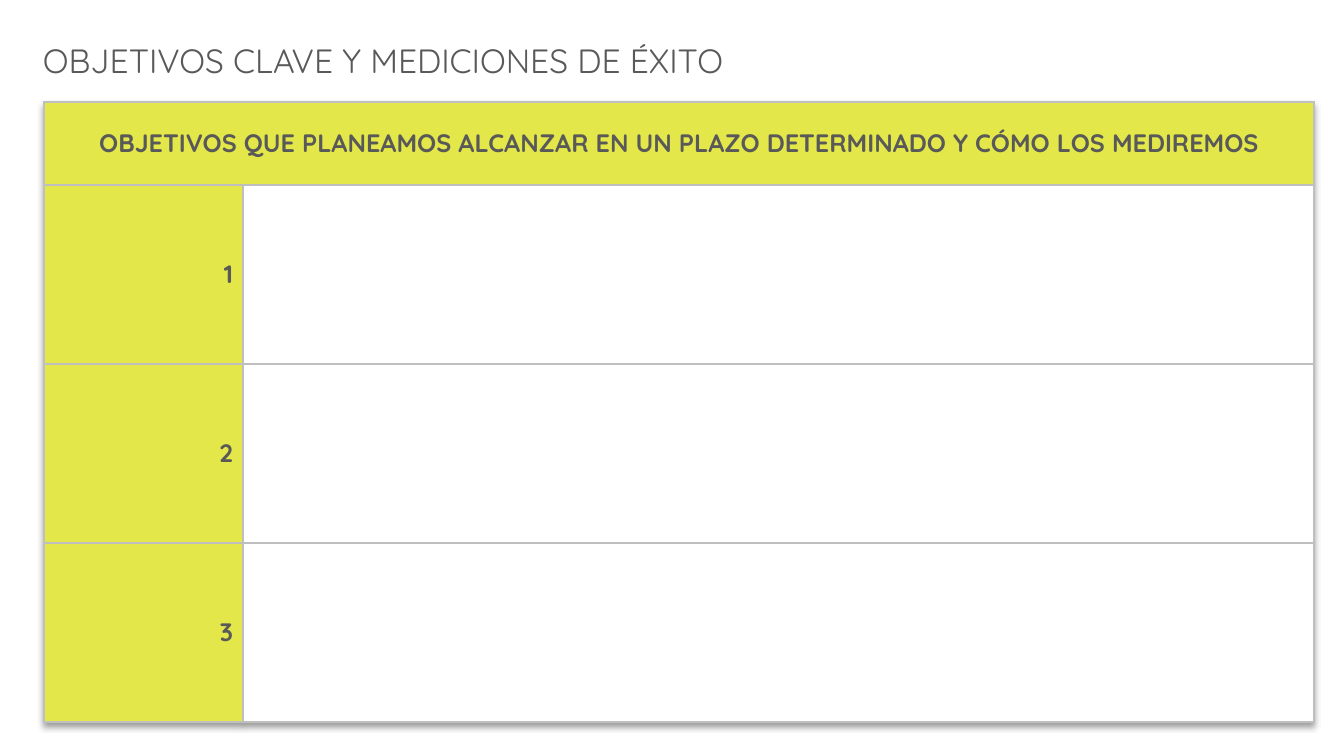
import pptx
import pptx.dml.color
import pptx.enum.text
import pptx.oxml
import pptx.oxml.ns
import pptx.util

COLORS = {"text": "595959", "accent": "E3E749", "border": "BFBFBF", "white": "FFFFFF", "shadow": "000000"}
FONT = "Quicksand"
PX_PER_INCH = 100.8
ALIGN = pptx.enum.text.PP_ALIGN
ANCHOR = pptx.enum.text.MSO_ANCHOR

TITLE = "OBJETIVOS CLAVE Y MEDICIONES DE ÉXITO"
HEADING = "OBJETIVOS QUE PLANEAMOS ALCANZAR EN UN PLAZO DETERMINADO Y CÓMO LOS MEDIREMOS"
GOALS = ["1", "2", "3"]
COLUMN_WIDTHS = [199, 1071]
HEADING_HEIGHT = 83
GOAL_HEIGHT = 179


def px(length):
    return pptx.util.Inches(length / PX_PER_INCH)


def rgb(name):
    return pptx.dml.color.RGBColor.from_string(COLORS[name])


def write_text(frame, text, size=18, bold=False, align=ALIGN.LEFT, color="text"):
    paragraph = frame.paragraphs[0]
    paragraph.alignment = align
    run = paragraph.add_run()
    run.text = text
    run.font.name = FONT
    run.font.size = pptx.util.Pt(size)
    run.font.bold = bold
    run.font.color.rgb = rgb(color)


def add_title(slide, text):
    box = slide.shapes.add_textbox(px(33), px(35), px(814), px(50))
    box.text_frame.word_wrap = True
    write_text(box.text_frame, text, size=24)


def style_cell(cell, fill):
    cell.vertical_anchor = ANCHOR.MIDDLE
    properties = cell._tc.get_or_add_tcPr()
    for side in ("lnL", "lnR", "lnT", "lnB"):
        properties.append(pptx.oxml.parse_xml(
            f'<a:{side} {pptx.oxml.ns.nsdecls("a")} w="12700"><a:solidFill>'
            f'<a:srgbClr val="{COLORS["border"]}"/></a:solidFill></a:{side}>'))
    cell.fill.solid()
    cell.fill.fore_color.rgb = rgb(fill)


def add_table_shadow(table):
    table._tbl.tblPr.insert(0, pptx.oxml.parse_xml(
        f'<a:effectLst {pptx.oxml.ns.nsdecls("a")}>'
        '<a:outerShdw blurRad="50800" dist="38100" dir="5400000" algn="t" rotWithShape="0">'
        f'<a:srgbClr val="{COLORS["shadow"]}"><a:alpha val="40000"/></a:srgbClr>'
        '</a:outerShdw></a:effectLst>'))


def add_goal_table(slide):
    heights = [HEADING_HEIGHT] + [GOAL_HEIGHT] * len(GOALS)
    table = slide.shapes.add_table(
        len(heights), len(COLUMN_WIDTHS), px(44), px(102),
        px(sum(COLUMN_WIDTHS)), px(sum(heights))).table
    table.first_row = False
    table.horz_banding = False
    add_table_shadow(table)
    for column, width in zip(table.columns, COLUMN_WIDTHS):
        column.width = px(width)
    for row_index, height in enumerate(heights):
        table.rows[row_index].height = px(height)
        for column_index in range(len(COLUMN_WIDTHS)):
            is_label = row_index == 0 or column_index == 0
            style_cell(table.cell(row_index, column_index), "accent" if is_label else "white")
    heading = table.cell(0, 0)
    heading.merge(table.cell(0, 1))
    write_text(heading.text_frame, HEADING, bold=True, align=ALIGN.CENTER)
    for row_index, goal in enumerate(GOALS, start=1):
        write_text(table.cell(row_index, 0).text_frame, goal, bold=True, align=ALIGN.RIGHT)


def main():
    presentation = pptx.Presentation()
    presentation.slide_width = px(1344)
    presentation.slide_height = px(756)
    slide = presentation.slides.add_slide(presentation.slide_layouts[6])
    add_title(slide, TITLE)
    add_goal_table(slide)
    presentation.save("out.pptx")


if __name__ == "__main__":
    main()
